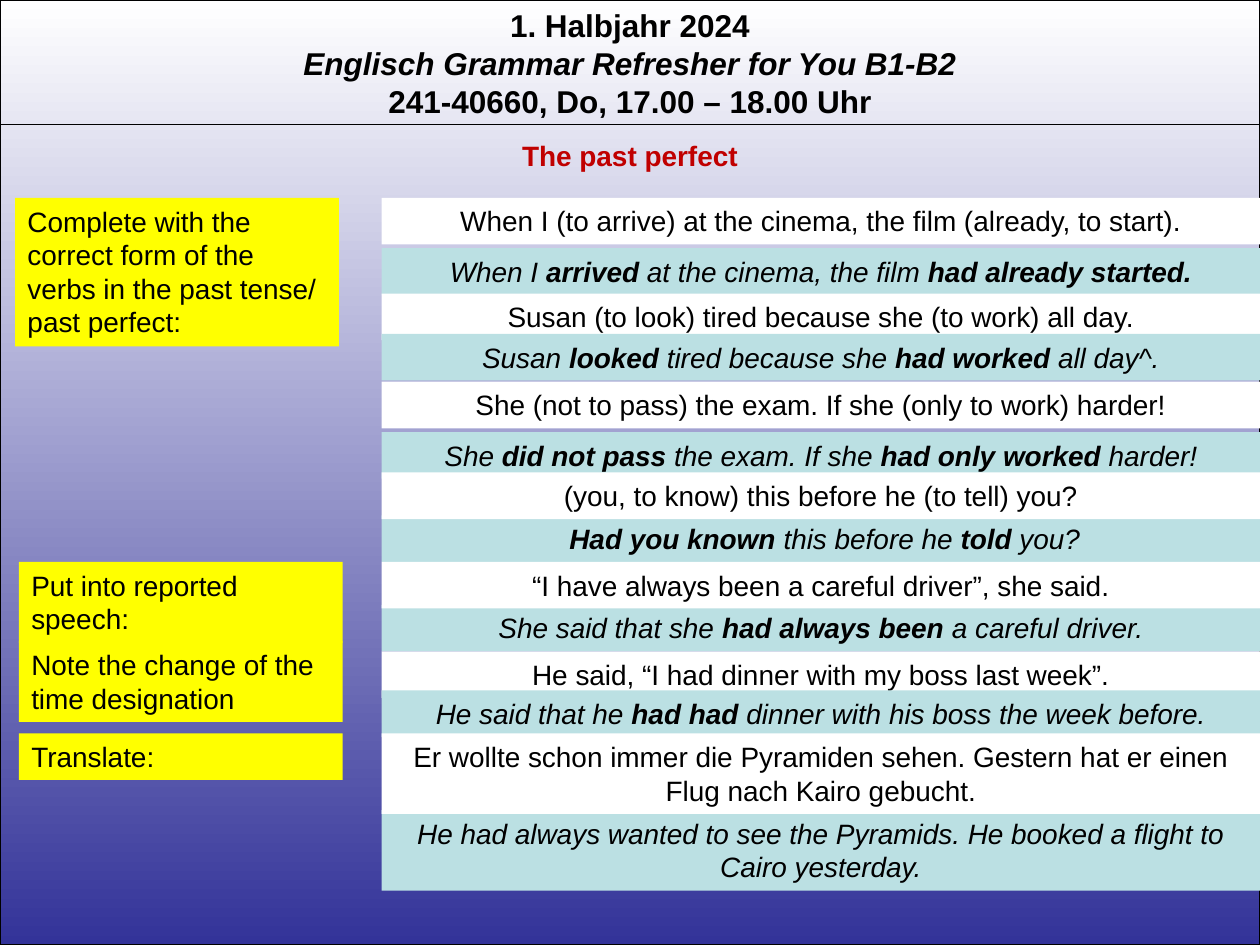
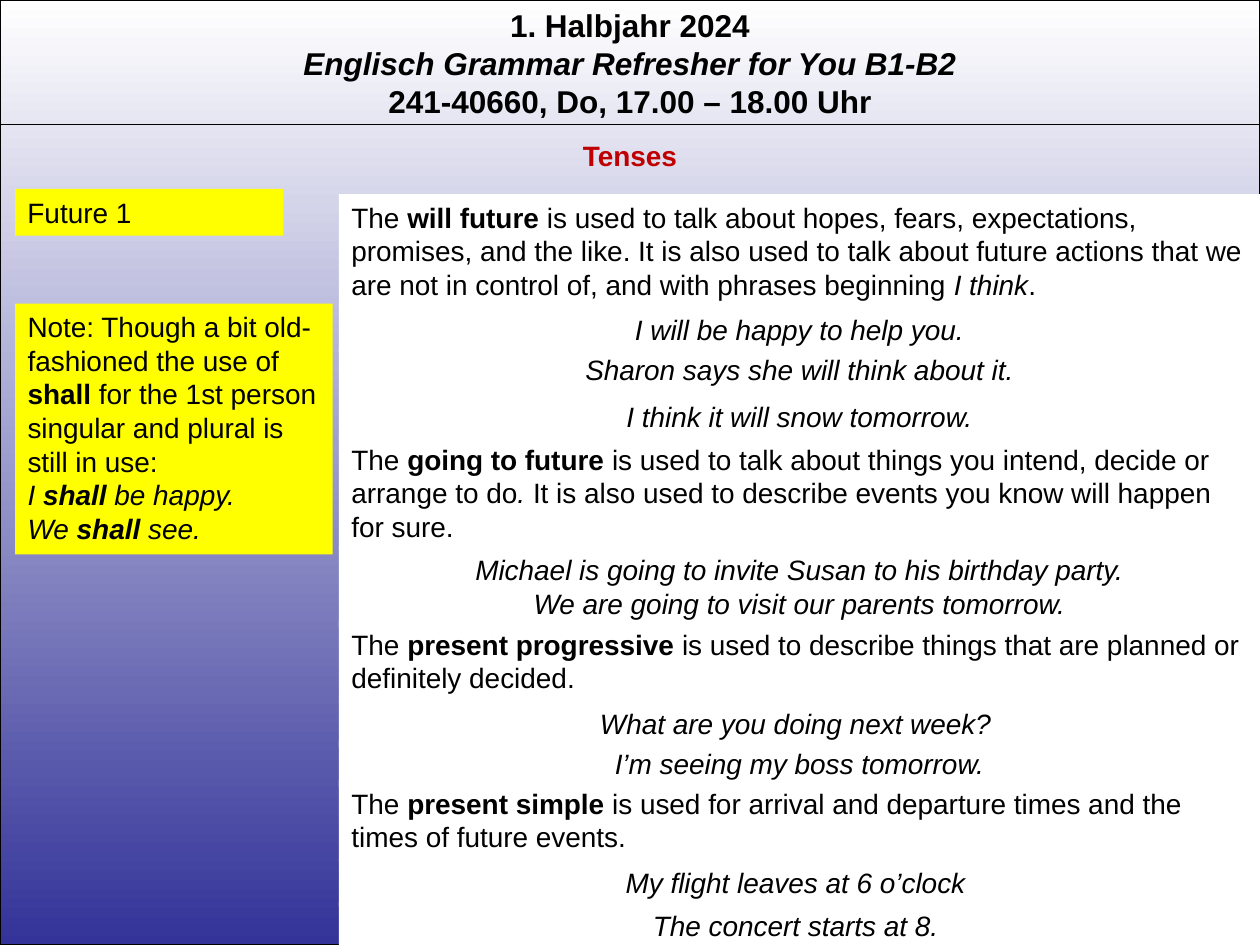
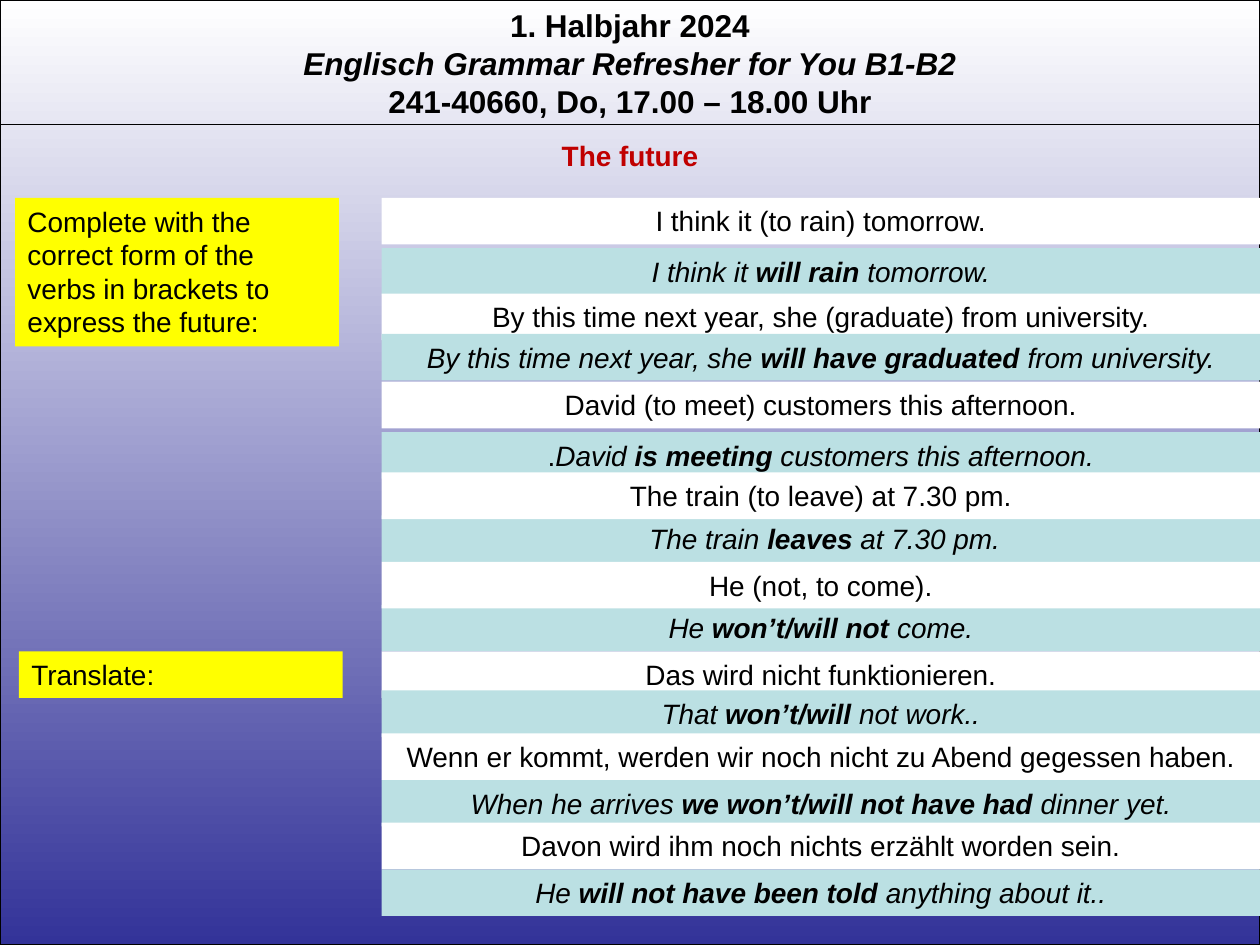
from pptx import Presentation
from pptx.dml.color import RGBColor
from pptx.enum.shapes import MSO_CONNECTOR, MSO_SHAPE
from pptx.enum.text import MSO_ANCHOR, PP_ALIGN
from pptx.oxml.ns import qn
from pptx.util import Inches, Pt
from lxml.etree import SubElement

BLACK, WHITE, RED = "000000", "FFFFFF", "C00000"
YELLOW, SKY, NAVY = "FFFF00", "BBE0E3", "333399"
FONT = "Arial"
HEAD = "1. Halbjahr 2024\n_Englisch Grammar Refresher for You B1-B2_\n241-40660, Do, 17.00 – 18.00 Uhr"

# Rows are (top, text, lines), from back to front; _ marks italic and * bold.
PERFECT = [
    (1.57, "When I (to arrive) at the cinema, the film (already, to start).", 1),
    (1.97, "_When I *arrived* at the cinema, the film *had already started.*_", 1),
    (2.33, "Susan (to look) tired because she (to work) all day.", 1),
    (2.65, "_Susan *looked* tired because she *had worked *all day^._", 1),
    (3.03, "She (not to pass) the exam. If she (only to work) harder!", 1),
    (3.43, "_She *did not pass *the exam. If she *had only worked* harder!_", 1),
    (4.09, " _*Had you known *this before he *told *you?_", 1),
    (3.75, "(you, to know) this before he (to tell) you?", 1),
    (4.8, "_She said that she* had always been *a careful driver._", 1),
    (4.46, "“I have always been a careful driver”, she said.", 1),
    (5.17, "He said, “I had dinner with my boss last week”.", 1),
    (5.48, "_He said that he *had had *dinner with his boss the week before._", 1),
    (6.43, "_He had always wanted to see the Pyramids. He booked a flight to Cairo yesterday._", 2),
    (5.82, "Er wollte schon immer die Pyramiden sehen. Gestern hat er einen Flug nach Kairo gebucht.", 2),
]
FUTURE = [
    (1.57, "I think it (to rain) tomorrow.", 1),
    (1.97, "_I think it *will rain* tomorrow._", 1),
    (2.33, "By this time next year, she (graduate) from university.", 1),
    (2.65, "_By this time next year, she *will have graduated *from university._", 1),
    (3.03, "David (to meet) customers this afternoon.", 1),
    (3.43, "._David *is meeting *customers this afternoon._", 1),
    (4.09, " _The train *leaves* at 7.30 pm._", 1),
    (3.75, "The train (to leave) at 7.30 pm.", 1),
    (4.8, "_He *won’t/will not *come._", 1),
    (4.46, "He (not, to come).", 1),
    (5.17, "Das wird nicht funktionieren.", 1),
    (5.48, "_That *won’t/will *not work.._", 1),
    (6.19, "_When he arrives *we won’t/will not have had *dinner yet._", 1),
    (5.82, "Wenn er kommt, werden wir noch nicht zu Abend gegessen haben.", 1),
    (6.9, "_He *will not have been told *anything about it.._", 1),
    (6.53, "Davon wird ihm noch nichts erzählt worden sein.", 1),
]
TENSES = [
    (1.54, "The *will future *is used to talk about hopes, fears, expectations, promises, and the like. "
           "It is also used to talk about future actions that we are not in control of, "
           "and with phrases beginning _I think_.", 3),
    (2.43, "_I will be happy to help you._", 1),
    (2.75, "_Sharon says she will think about it._", 1),
    (3.12, "_I think it will snow tomorrow._", 1),
    (3.46, "The *going to future *is used to talk about things you intend, decide or arrange to do_. _"
           "It is also used to describe events you know will happen for sure.", 3),
    (4.34, "_Michael is going to invite Susan to his birthday party._\n"
           "_We are going to visit our parents tomorrow._", 2),
    (4.93, "The *present progressive *is used to describe things that are planned or definitely decided.", 2),
    (5.56, "_What are you doing next week? _", 1),
    (5.88, "_I’m seeing my boss tomorrow._", 1),
    (6.19, "The *present simple *is used for arrival and departure times and the times of future events.", 2),
    (6.82, "_My flight leaves at 6 o’clock _", 1),
    (7.16, "_The concert starts at 8. _", 1),
]
SHALL = ("Note: Though a bit old-fashioned the use of *shall *for the 1st person singular and plural "
         "is still in use:\n_I *shall *be happy._\n_We *shall *see._")


def paint(color):
    return RGBColor.from_string(color)


def tall(lines):
    return 0.1 + 0.27 * lines


def write(shape, text, align=PP_ALIGN.LEFT, size=16, color=BLACK, bold=False):
    """Fill a shape with marked text, one paragraph a line."""
    frame = shape.text_frame
    frame.word_wrap = True
    frame.vertical_anchor = MSO_ANCHOR.TOP
    for n, line in enumerate(text.split("\n")):
        para = frame.add_paragraph() if n else frame.paragraphs[0]
        para.alignment = align
        font = para.font
        font.name, font.size, font.bold = FONT, Pt(size), bold
        font.color.rgb = paint(color)
        for i, part in enumerate(line.split("_")):
            for j, bit in enumerate(part.split("*")):
                if bit:
                    run = para.add_run()
                    run.text = bit
                    if i % 2:
                        run.font.italic = True
                    if j % 2:
                        run.font.bold = True


def panel(slide, left, top, width, text, lines, fill, align=PP_ALIGN.LEFT):
    box = slide.shapes.add_shape(
        MSO_SHAPE.RECTANGLE, Inches(left), Inches(top), Inches(width), Inches(tall(lines)))
    box.shadow.inherit = False
    box.fill.solid()
    box.fill.fore_color.rgb = paint(fill)
    box.line.fill.background()
    write(box, text, align)


def backdrop(slide, layout):
    """Build the gradient page, course heading and rule, and keep them on the layout."""
    shapes = slide.shapes
    page = shapes.add_shape(MSO_SHAPE.RECTANGLE, 0, 0, Inches(10), Inches(7.5))
    page.shadow.inherit = False
    page.fill.gradient()
    page.fill.gradient_angle = 270
    for stop, color, place in zip(page.fill.gradient_stops, (WHITE, NAVY), (0, 1)):
        stop.color.rgb = paint(color)
        stop.position = place
    head = shapes.add_textbox(0, 0, Inches(10), Inches(1.01))
    write(head, HEAD, PP_ALIGN.CENTER, 18, bold=True)
    rule = shapes.add_connector(
        MSO_CONNECTOR.STRAIGHT, 0, Inches(0.99), Inches(10), Inches(0.99))
    SubElement(rule.element.spPr, qn("a:effectLst"))
    for edge in (page.line, rule.line):
        edge.color.rgb = paint(BLACK)
        edge.width = Pt(0.75)

    tree = layout.shapes.element
    for spot in list(layout.placeholders):
        if spot.placeholder_format.idx:
            tree.remove(spot.element)
    for n, part in enumerate((page, head, rule)):
        tree.insert(2 + n, part.element)


def caption(slide, text):
    title = slide.shapes.title
    title.left, title.top = 0, Inches(1.05)
    title.width, title.height = Inches(10), Inches(tall(1))
    write(title, text, PP_ALIGN.CENTER, color=RED, bold=True)


def drill(slide, rows, left=3.03, width=6.97):
    """Questions on white, answers on sky blue."""
    for top, text, lines in rows:
        fill = SKY if "_" in text else WHITE
        panel(slide, left, top, width, text, lines, fill, PP_ALIGN.CENTER)


def rules(slide, rows, left=2.69, width=7.31):
    """Rules set left, their examples centred."""
    for top, text, lines in rows:
        align = PP_ALIGN.CENTER if text.startswith("_") else PP_ALIGN.LEFT
        panel(slide, left, top, width, text, lines, WHITE, align)


def notes(slide, items):
    for left, top, width, text, lines in items:
        panel(slide, left, top, width, text, lines, YELLOW)


def main():
    deck = Presentation()
    deck.slide_width, deck.slide_height = Inches(10), Inches(7.5)
    layout = deck.slide_layouts[5]
    first, second, third = [deck.slides.add_slide(layout) for _ in range(3)]
    backdrop(first, layout)

    # Past perfect exercise
    caption(first, "The past perfect")
    drill(first, PERFECT)
    notes(first, [
        (0.12, 1.57, 2.57, "Complete with the correct form of the verbs in the past tense/ past perfect:", 4),
        (0.15, 4.46, 2.57, "Put into reported speech:", 2),
        (0.15, 5.82, 2.57, "Translate:", 1),
        (0.15, 5.09, 2.57, "Note the change of the time designation", 2),
    ])

    # Future tenses explained
    caption(second, "Tenses")
    rules(second, TENSES)
    notes(second, [(0.12, 1.5, 2.13, "Future 1", 1), (0.12, 2.41, 2.52, SHALL, 7)])

    # Future exercise
    caption(third, "The future")
    drill(third, FUTURE)
    notes(third, [
        (0.12, 1.57, 2.57, "Complete with the correct form of the verbs in brackets to express the future:", 4),
        (0.15, 5.17, 2.57, "Translate:", 1),
    ])

    deck.save("out.pptx")


if __name__ == "__main__":
    main()
